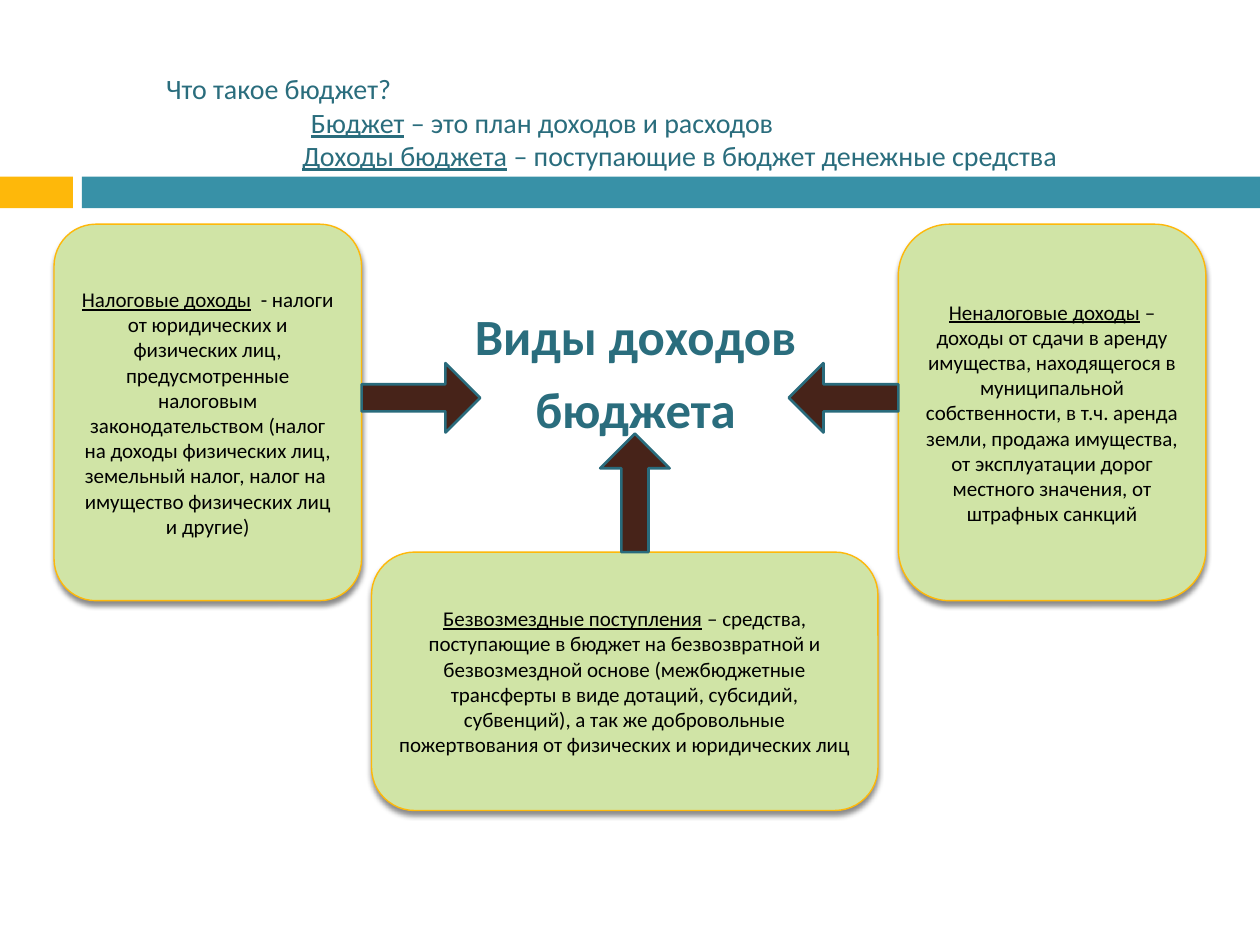
"""Build the slide on the kinds of budget income."""
from math import cos, radians, sin

from lxml.etree import SubElement
from pptx import Presentation
from pptx.dml.color import RGBColor
from pptx.enum.shapes import MSO_SHAPE as Kind
from pptx.enum.text import MSO_ANCHOR as Anchor, PP_ALIGN as Align
from pptx.oxml.ns import qn
from pptx.util import Cm, Pt

FONT = "Calibri"
GOLD = RGBColor(0xFE, 0xB8, 0x0A)
TEAL = RGBColor(0x38, 0x91, 0xA7)
DEEP = RGBColor(0x2A, 0x6D, 0x7D)
EDGE = RGBColor(0x29, 0x6B, 0x7C)
GREEN = RGBColor(0xD0, 0xE4, 0xA6)
BROWN = RGBColor(0x47, 0x23, 0x19)
BLACK = RGBColor(0, 0, 0)

BARS = [(0, 1.47, GOLD), (1.65, 23.75, TEAL)]
INTRO = [
    ("", "Что такое бюджет?", Align.LEFT, 0),
    ("Бюджет", " – это план доходов и расходов", Align.LEFT, 2.92),
    ("Доходы бюджета", " – поступающие в бюджет денежные средства",
     Align.CENTER, 0),
]
HEAD = ["Виды доходов", "бюджета"]
CARDS = [
    ((18.11, 4.52, 6.2, 7.59), 0.167, "Неналоговые доходы",
     " – доходы от сдачи в аренду имущества, находящегося в муниципальной "
     "собственности, в т.ч. аренда земли, продажа имущества, от эксплуатации "
     "дорог местного значения, от штрафных санкций"),
    ((1.09, 4.52, 6.2, 7.59), 0.136, "Налоговые доходы",
     "  - налоги от юридических и физических лиц, предусмотренные налоговым "
     "законодательством (налог на доходы физических лиц, земельный налог, "
     "налог на  имущество физических лиц и другие)"),
    ((7.49, 11.13, 10.21, 5.21), 0.167, "Безвозмездные поступления",
     " – средства, поступающие в бюджет на безвозвратной и безвозмездной "
     "основе (межбюджетные трансферты в виде дотаций, субсидий, субвенций), "
     "а так же добровольные пожертвования от физических и юридических лиц"),
]
ARROWS = [(18.11, 8.02, 2.21, 180), (7.29, 8.02, 2.39, 0),
          (12.8, 11.13, 2.39, 270)]
THICK = 1.4

deck = Presentation()
deck.slide_width, deck.slide_height = Cm(25.4), Cm(19.05)
slide = deck.slides.add_slide(deck.slide_layouts[6])


def draw(kind, box, fill, line=None, width=0):
    shape = slide.shapes.add_shape(kind, *map(Cm, box))
    shape.shadow.inherit = False
    shape.fill.solid()
    shape.fill.fore_color.rgb = fill
    if line is None:
        shape.line.fill.background()
    else:
        shape.line.color.rgb = line
        shape.line.width = Pt(width)
    return shape


def shade(shape):
    effects = shape._element.spPr.find(qn("a:effectLst"))
    outer = SubElement(effects, qn("a:outerShdw"), blurRad=str(Pt(3)),
                       dist=str(Pt(2.4)), dir="5400000", rotWithShape="0")
    tint = SubElement(outer, qn("a:srgbClr"), val="000000")
    SubElement(tint, qn("a:alpha"), val="45000")


def write(para, parts, size, color, align, bold=False):
    para.alignment = align
    for text, under in parts:
        if text:
            run = para.add_run()
            run.text = text
            font = run.font
            font.name, font.size, font.bold = FONT, Pt(size), bold
            font.underline = under
            font.color.rgb = color


def frame(box):
    text = slide.shapes.add_textbox(*map(Cm, box)).text_frame
    text.word_wrap = True
    return text


def lines(text, count):
    return [text.paragraphs[0]] + [text.add_paragraph()
                                   for _ in range(count - 1)]


for left, width, fill in BARS:
    draw(Kind.RECTANGLE, (left, 3.56, width, 0.64), fill)

body = frame((0.71, 4.52, 24.21, 5.59))
body.margin_top = Cm(1.63)
for i, (para, text) in enumerate(zip(lines(body, len(HEAD)), HEAD)):
    para.space_before = Pt(7 if i else 0)
    write(para, [(text, False)], 29, DEEP, Align.CENTER, True)

intro = frame((3.1, 1.32, 21.21, 2.31))
for para, (term, rest, align, indent) in zip(lines(intro, len(INTRO)), INTRO):
    write(para, [(term, True), (rest, False)], 16, DEEP, align)
    if indent:
        para._p.get_or_add_pPr().set("marL", str(Cm(indent)))

for box, bend, term, rest in CARDS:
    card = draw(Kind.ROUNDED_RECTANGLE, box, GREEN, GOLD, 0.79)
    card.adjustments[0] = bend
    shade(card)
    text = card.text_frame
    text.word_wrap = True
    text.vertical_anchor = Anchor.MIDDLE
    write(text.paragraphs[0], [(term, True), (rest, False)], 12, BLACK,
          Align.CENTER)

for x, y, size, turn in ARROWS:
    mid = x + size / 2 * cos(radians(turn))
    level = y + size / 2 * sin(radians(turn))
    box = (mid - size / 2, level - THICK / 2, size, THICK)
    arrow = draw(Kind.RIGHT_ARROW, box, BROWN, EDGE, 1.5)
    arrow.adjustments[0] = 0.39
    arrow.adjustments[1] = 0.5
    arrow.rotation = turn

deck.save("out.pptx")
